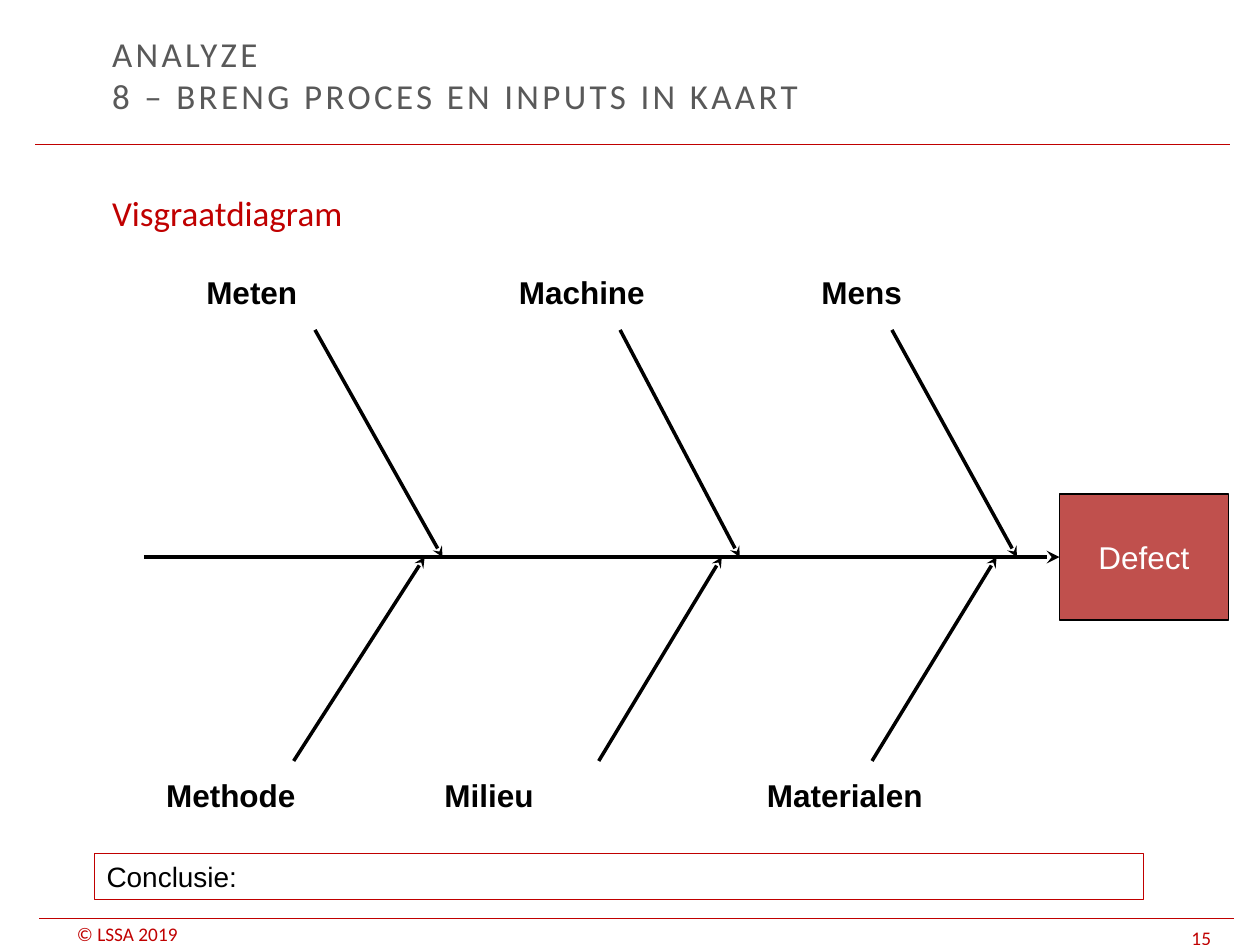
from typing import NamedTuple

import pptx
import pptx.dml.color
import pptx.enum.shapes
import pptx.enum.text
import pptx.oxml.ns
import pptx.util
from lxml import etree

Cm = pptx.util.Cm
Pt = pptx.util.Pt
RGBColor = pptx.dml.color.RGBColor
ANCHOR = pptx.enum.text.MSO_ANCHOR
ALIGN = pptx.enum.text.PP_ALIGN
qn = pptx.oxml.ns.qn

RED = RGBColor(0xC0, 0x00, 0x00)
BOX_RED = RGBColor(0xC0, 0x50, 0x4D)
GRAY = RGBColor(0x59, 0x59, 0x59)
BLACK = RGBColor(0x00, 0x00, 0x00)
WHITE = RGBColor(0xFF, 0xFF, 0xFF)

SPINE_Y = 11.23


class Side(NamedTuple):
    bone_y: float
    label_y: float


class Cause(NamedTuple):
    name: str
    side: Side
    label_x: float
    label_w: float
    start_x: float
    end_x: float


ABOVE = Side(6.65, 5.38)
BELOW = Side(15.34, 15.52)
CAUSES = [
    Cause("Meten", ABOVE, 3.91, 2.36, 6.35, 8.92),
    Cause("Machine", ABOVE, 10.21, 3.07, 12.5, 14.91),
    Cause("Mens", ABOVE, 16.31, 2.16, 17.98, 20.5),
    Cause("Methode", BELOW, 3.1, 3.15, 5.92, 8.56),
    Cause("Milieu", BELOW, 8.71, 2.34, 12.07, 14.55),
    Cause("Materialen", BELOW, 15.21, 3.68, 17.58, 20.09),
]


def write(sp, text, *, size, color, font="Arial", bold=False, align=ALIGN.LEFT,
          anchor=ANCHOR.TOP, wrap=True, spacing=None, pad_y=0.13):
    tf = sp.text_frame
    tf.word_wrap = wrap
    tf.vertical_anchor = anchor
    tf.margin_top = tf.margin_bottom = Cm(pad_y)
    p = tf.paragraphs[0]
    p.alignment = align
    for i, line in enumerate(text.split("\n")):
        if i:
            p.add_line_break()
        r = p.add_run()
        r.text = line
        r.font.name = font
        r.font.size = Pt(size)
        r.font.bold = bold
        r.font.color.rgb = color
        if spacing:
            r.font._element.set("spc", str(round(spacing * 100)))


def add_text(s, x: float, y: float, w: float, h: float, text: str, **fmt):
    sp = s.shapes.add_textbox(Cm(x), Cm(y), Cm(w), Cm(h))
    write(sp, text, **fmt)
    return sp


def add_box(s, x: float, y: float, w: float, h: float, text: str, line, fill=None, **fmt):
    sp = s.shapes.add_shape(pptx.enum.shapes.MSO_SHAPE.RECTANGLE, Cm(x), Cm(y), Cm(w), Cm(h))
    sp.shadow.inherit = False
    if fill is None:
        sp.fill.background()
    else:
        sp.fill.solid()
        sp.fill.fore_color.rgb = fill
    sp.line.color.rgb = line
    sp.line.width = Pt(0.75)
    write(sp, text, **fmt)
    return sp


def add_line(s, x1: float, y1: float, x2: float, y2: float, color, width: float, arrow=False):
    cxn = s.shapes.add_connector(pptx.enum.shapes.MSO_CONNECTOR.STRAIGHT,
                                 Cm(x1), Cm(y1), Cm(x2), Cm(y2))
    cxn.line.color.rgb = color
    cxn.line.width = Pt(width)
    if arrow:
        etree.SubElement(cxn.line._get_or_add_ln(), qn("a:tailEnd"), type="stealth")
    etree.SubElement(cxn._element.spPr, qn("a:effectLst"))
    return cxn


def main():
    prs = pptx.Presentation()
    prs.slide_width, prs.slide_height = Cm(25.4), Cm(19.05)
    s = prs.slides.add_slide(prs.slide_layouts[6])

    footer = dict(size=11, color=RED, font="Calibri", anchor=ANCHOR.BOTTOM, pad_y=0)
    add_text(s, 1.3, 18.59, 3.6, 0.46, "© LSSA 2019", **footer)
    add_text(s, 23.77, 18.57, 1.63, 0.56, "15", **footer)
    add_line(s, 0.71, 2.92, 24.79, 2.92, RED, 0.75)
    add_line(s, 0.79, 18.52, 24.87, 18.52, RED, 0.75)

    add_text(s, 2.01, 0.66, 18.01, 1.68, "ANALYZE\n8 – BRENG PROCES EN INPUTS IN KAART",
             size=20, color=GRAY, font="Calibri", anchor=ANCHOR.MIDDLE, spacing=1.9)
    add_text(s, 2.01, 3.73, 22, 14, "Visgraatdiagram", size=20, color=RED, font="Calibri")

    defect = add_box(s, 21.36, SPINE_Y - 1.27, 3.4, 2.54, "Defect", BLACK, BOX_RED, size=18,
                     color=WHITE, align=ALIGN.CENTER, anchor=ANCHOR.MIDDLE)
    spine = add_line(s, 2.9, SPINE_Y, 21.36, SPINE_Y, BLACK, 2.5, arrow=True)
    spine.end_connect(defect, 1)

    for c in CAUSES:
        add_line(s, c.start_x, c.side.bone_y, c.end_x, SPINE_Y, BLACK, 2, arrow=True)
        add_text(s, c.label_x, c.side.label_y, c.label_w, 1.02, c.name,
                 size=18, color=BLACK, bold=True, wrap=False)

    add_box(s, 1.9, 17.2, 21.16, 0.94, "Conclusie:", RED, size=16, color=BLACK)
    prs.save("out.pptx")


if __name__ == "__main__":
    main()
